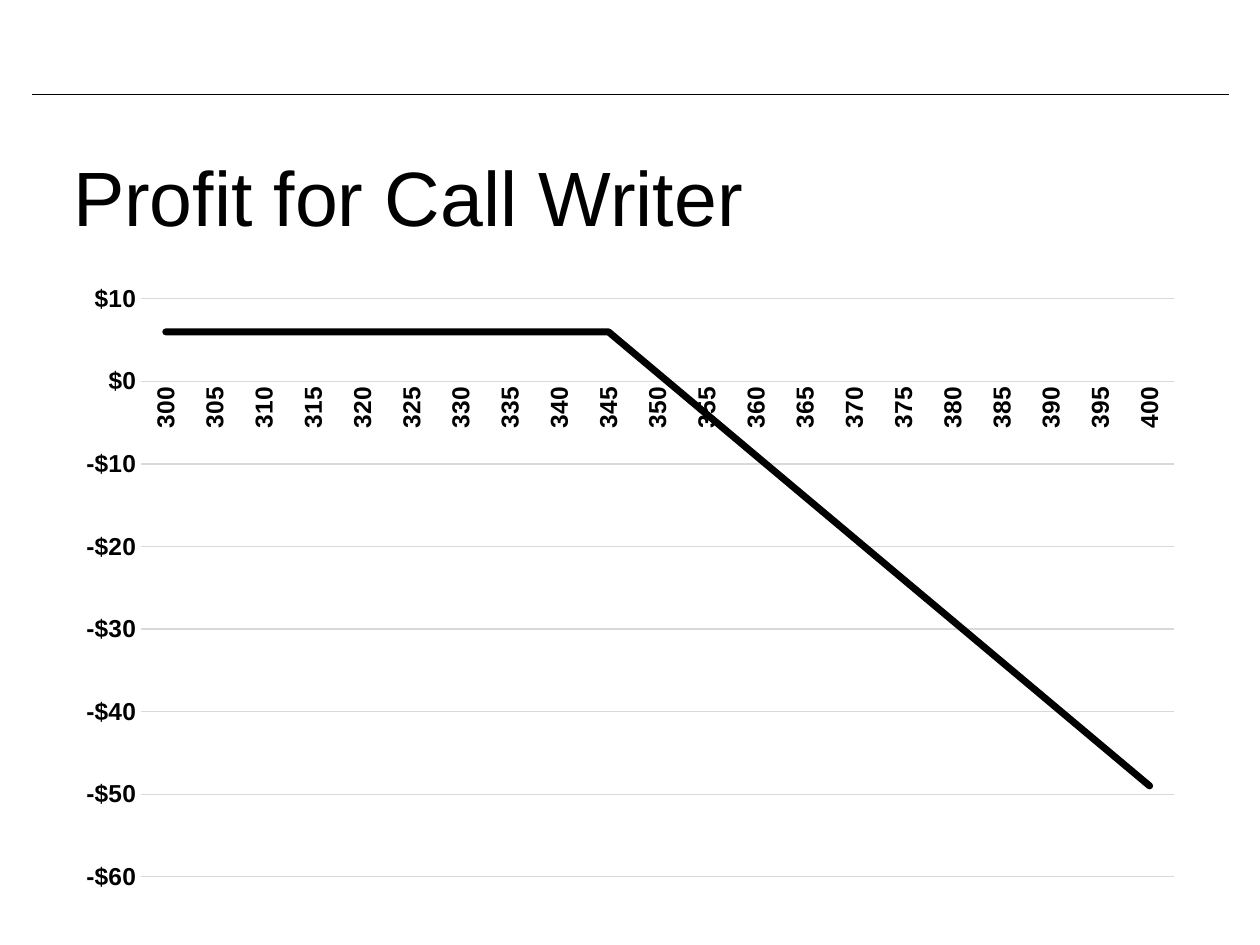
from lxml.etree import SubElement
from pptx import Presentation
from pptx.chart.data import CategoryChartData
from pptx.dml.color import RGBColor
from pptx.enum.chart import XL_CHART_TYPE, XL_TICK_MARK
from pptx.enum.shapes import MSO_CONNECTOR
from pptx.enum.text import MSO_ANCHOR, MSO_AUTO_SIZE, PP_ALIGN
from pptx.oxml import parse_xml
from pptx.oxml.ns import nsdecls, qn
from pptx.util import Inches, Pt

BLACK = RGBColor(0x00, 0x00, 0x00)
GRID = RGBColor(0xD9, 0xD9, 0xD9)
FONT = "Arial"
MONEY = '"$"#,##0'
STRIKE, PREMIUM = 345, 6


class Deck:
    """Style and current slide, with lengths given as shares of the slide."""

    def __init__(self, width, height):
        self.prs = Presentation()
        self.prs.slide_width, self.prs.slide_height = Inches(width), Inches(height)
        self.s = self.prs.slides.add_slide(self.prs.slide_layouts[5])

    def box(self, x, y, w, h):
        sw, sh = self.prs.slide_width, self.prs.slide_height
        return int(x * sw), int(y * sh), int(w * sw), int(h * sh)

    def style(self, font, size, bold=False):
        font.name, font.size, font.bold = FONT, Pt(size), bold
        font.color.rgb = BLACK

    def rule(self, x1, x2, y):
        left, top, right, _ = self.box(x1, y, x2, 0)
        sp = self.s.shapes.add_connector(MSO_CONNECTOR.STRAIGHT, left, top, right, top)
        sp.line.color.rgb, sp.line.width = BLACK, Pt(1)
        SubElement(sp._element.spPr, qn("a:effectLst"))

    def title(self, text, x, y, w, h):
        sp = self.s.shapes.title
        sp.left, sp.top, sp.width, sp.height = self.box(x, y, w, h)
        tf = sp.text_frame
        tf.word_wrap, tf.auto_size = True, MSO_AUTO_SIZE.NONE
        tf.vertical_anchor = MSO_ANCHOR.TOP
        tf.margin_left, tf.margin_top = Inches(0.08), Inches(0.11)
        p = tf.paragraphs[0]
        p.alignment = PP_ALIGN.LEFT
        r = p.add_run()
        r.text = text
        self.style(r.font, 44)

    def axis(self, axis):
        axis.major_tick_mark = axis.minor_tick_mark = XL_TICK_MARK.NONE
        axis.tick_labels.number_format = MONEY
        axis.tick_labels.number_format_is_linked = False
        self.style(axis.tick_labels.font, 14, True)

    def line_chart(self, cats, vals, low, high, step, x, y, w, h):
        data = CategoryChartData()
        data.categories = cats
        data.add_series("Series 1", vals)
        chart = self.s.shapes.add_chart(XL_CHART_TYPE.LINE, *self.box(x, y, w, h), data).chart
        chart.has_legend = chart.has_title = False
        self.style(chart.font, 14, True)
        cat, val = chart.category_axis, chart.value_axis
        self.axis(cat)
        self.axis(val)
        cat.format.line.color.rgb, cat.format.line.width = GRID, Pt(0.75)
        cat.tick_labels.font._element.getparent().getparent().getparent().find(
            qn("a:bodyPr")).set("rot", "-5400000")
        val.minimum_scale, val.maximum_scale, val.major_unit = low, high, step
        val.format.line.fill.background()
        grid = val.major_gridlines.format.line
        grid.color.rgb, grid.width = GRID, Pt(0.75)
        plot = chart.plots[0]
        plot.vary_by_categories = False
        series = plot.series[0]
        series.smooth = False
        line = series.format.line
        line.color.rgb, line.width = BLACK, Pt(4)
        line._ln.set("cap", "rnd")
        self.inner_layout(chart, x=0.069, y=0.041, w=0.911, h=0.917)

    def inner_layout(self, chart, **shares):
        area = chart._chartSpace.chart.plotArea
        for old in area.findall(qn("c:layout")):
            area.remove(old)
        sizes = "".join(f'<c:{key} val="{val}"/>' for key, val in shares.items())
        area.insert(0, parse_xml(
            f'<c:layout {nsdecls("c")}><c:manualLayout><c:layoutTarget val="inner"/>'
            f'<c:xMode val="edge"/><c:yMode val="edge"/>{sizes}</c:manualLayout></c:layout>'))


def main():
    deck = Deck(10, 7.5)
    deck.rule(0.025, 0.975, 0.1)
    deck.title("Profit for Call Writer", 0.05, 0.144, 0.9, 0.144)
    prices = range(300, 401, 5)
    profits = [PREMIUM - max(0, price - STRIKE) for price in prices]
    deck.line_chart([str(price) for price in prices], profits, -60, 10, 10,
                    0.05, 0.289, 0.9, 0.667)
    deck.prs.save("out.pptx")


if __name__ == "__main__":
    main()
